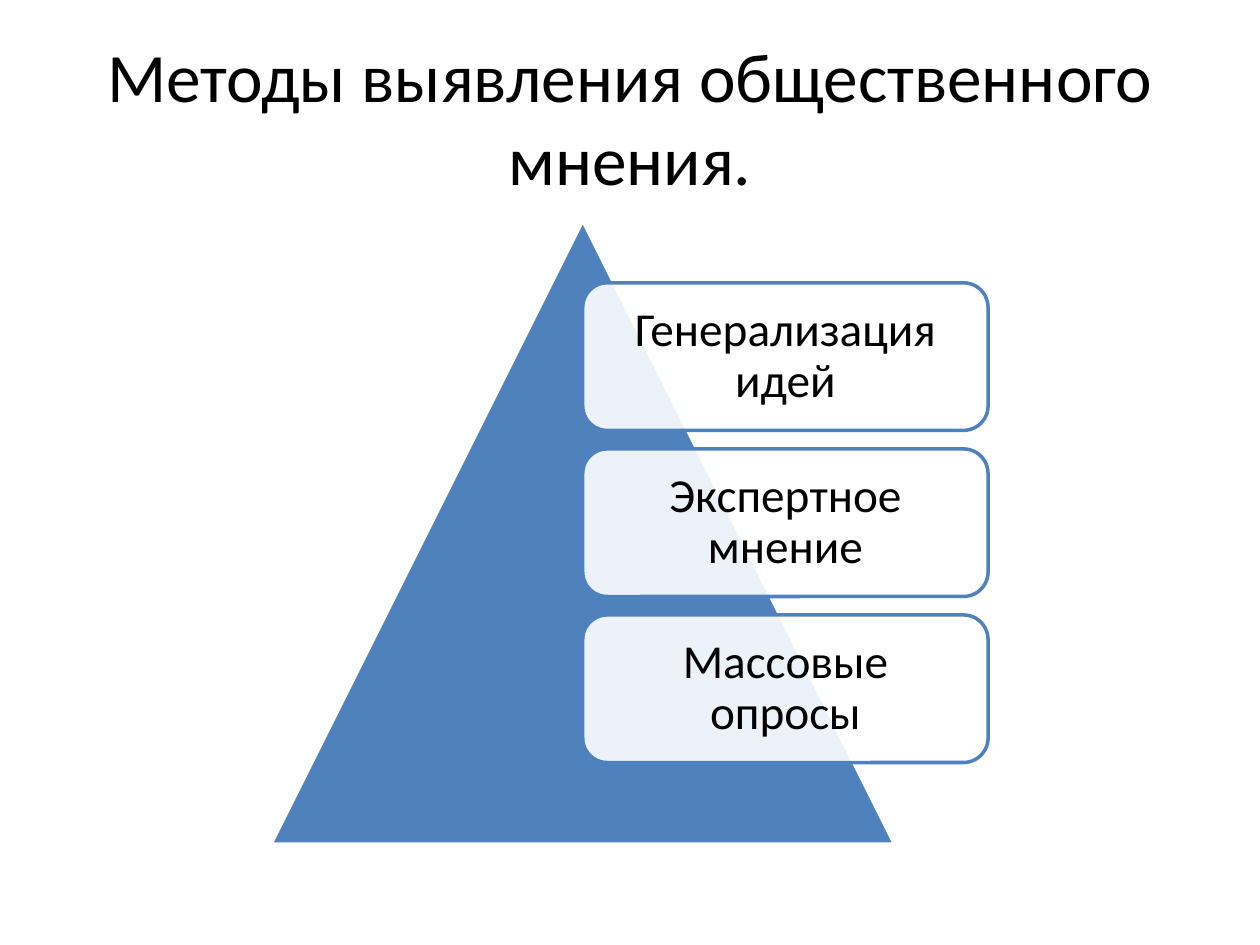
from lxml import etree
from pptx import Presentation
from pptx.dml.color import RGBColor
from pptx.enum.shapes import MSO_SHAPE
from pptx.enum.text import MSO_ANCHOR, PP_ALIGN
from pptx.oxml.ns import qn
from pptx.util import Inches, Pt

FONT = "Calibri"
BLACK, WHITE, BLUE = "000000", "FFFFFF", "4F81BD"
METHODS = ["Генерализация идей", "Экспертное мнение", "Массовые опросы"]


def color(hex_value):
    return RGBColor.from_string(hex_value)


def write_text(shape, text, size, margin, line_spacing=1.0):
    frame = shape.text_frame
    frame.word_wrap = True
    frame.vertical_anchor = MSO_ANCHOR.MIDDLE
    frame.margin_left = frame.margin_right = margin
    frame.margin_top = frame.margin_bottom = margin
    paragraph = frame.paragraphs[0]
    paragraph.text = text
    paragraph.alignment = PP_ALIGN.CENTER
    paragraph.line_spacing = line_spacing
    paragraph.font.name = FONT
    paragraph.font.size = Pt(size)
    paragraph.font.color.rgb = color(BLACK)


def add_filled_shape(slide, preset, box, fill, line):
    shape = slide.shapes.add_shape(preset, *box)
    shape.shadow.inherit = False
    shape.fill.solid()
    shape.fill.fore_color.rgb = color(fill)
    shape.line.color.rgb = color(line)
    shape.line.width = Pt(2)
    return shape


def set_opacity(shape, percent):
    solid_color = shape.fill._xPr.find(qn("a:solidFill"))[0]
    etree.SubElement(solid_color, qn("a:alpha"), val=str(percent * 1000))


def add_title(slide, box, text):
    title = slide.shapes.add_textbox(*box)
    write_text(title, text, 39.6, Inches(0.1))


def add_pyramid_list(slide, left, top, side, items):
    """Draw a triangle with a column of cards starting at its vertical axis."""
    add_filled_shape(slide, MSO_SHAPE.ISOSCELES_TRIANGLE,
                     (left, top, side, side), BLUE, WHITE)
    card_left = left + side // 2
    card_width = int(side * 0.65)
    card_height = int(side * 0.71 / len(items))
    pitch = card_height * 9 // 8
    first_top = top + side // 10
    for index, item in enumerate(items):
        box = (card_left, first_top + index * pitch, card_width, card_height)
        card = add_filled_shape(slide, MSO_SHAPE.ROUNDED_RECTANGLE, box, WHITE, BLUE)
        set_opacity(card, 90)
        write_text(card, item, 27, Inches(0.11), line_spacing=0.9)


def main():
    presentation = Presentation()
    presentation.slide_width = Inches(10)
    presentation.slide_height = Inches(7.5)
    slide = presentation.slides.add_slide(presentation.slide_layouts[6])
    add_title(slide, (Inches(0.5), Inches(0.3), Inches(9), Inches(1.25)),
              "Методы выявления общественного мнения.")
    add_pyramid_list(slide, Inches(2.15), Inches(1.75), Inches(4.95), METHODS)
    presentation.save("out.pptx")


if __name__ == "__main__":
    main()
